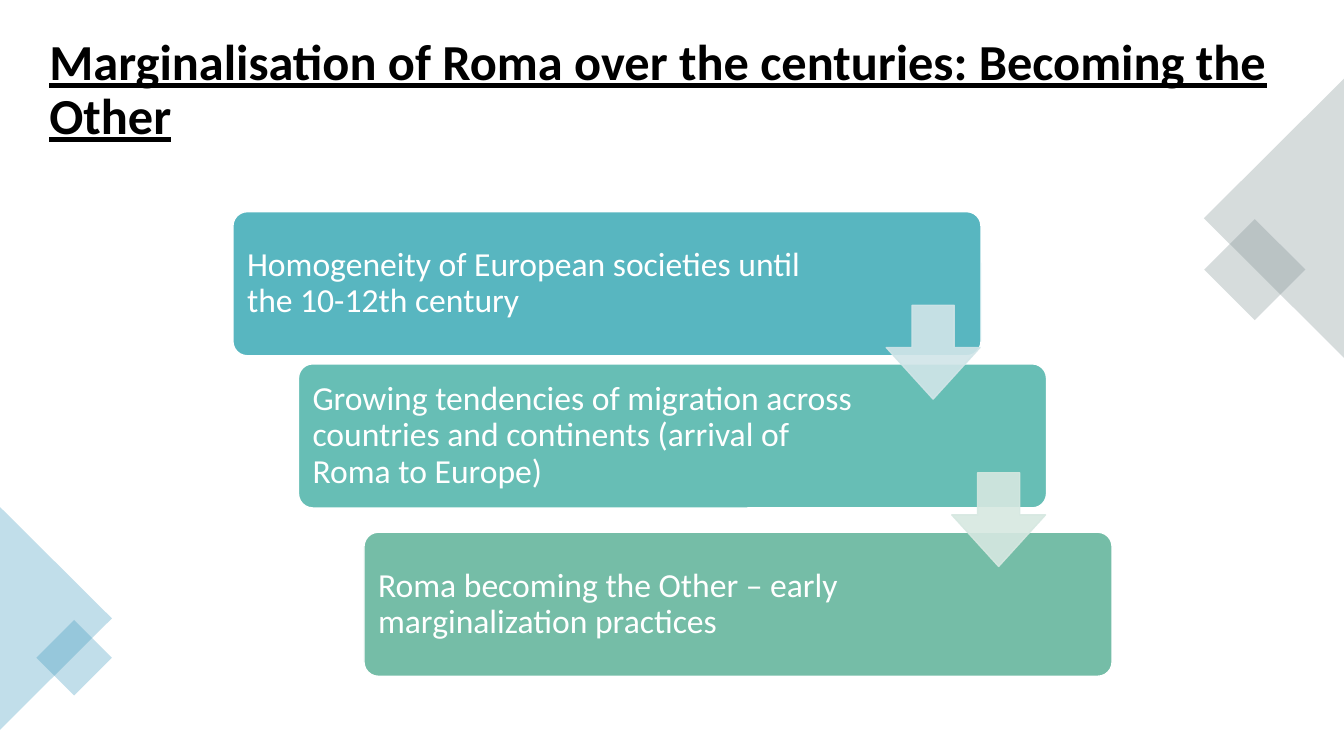
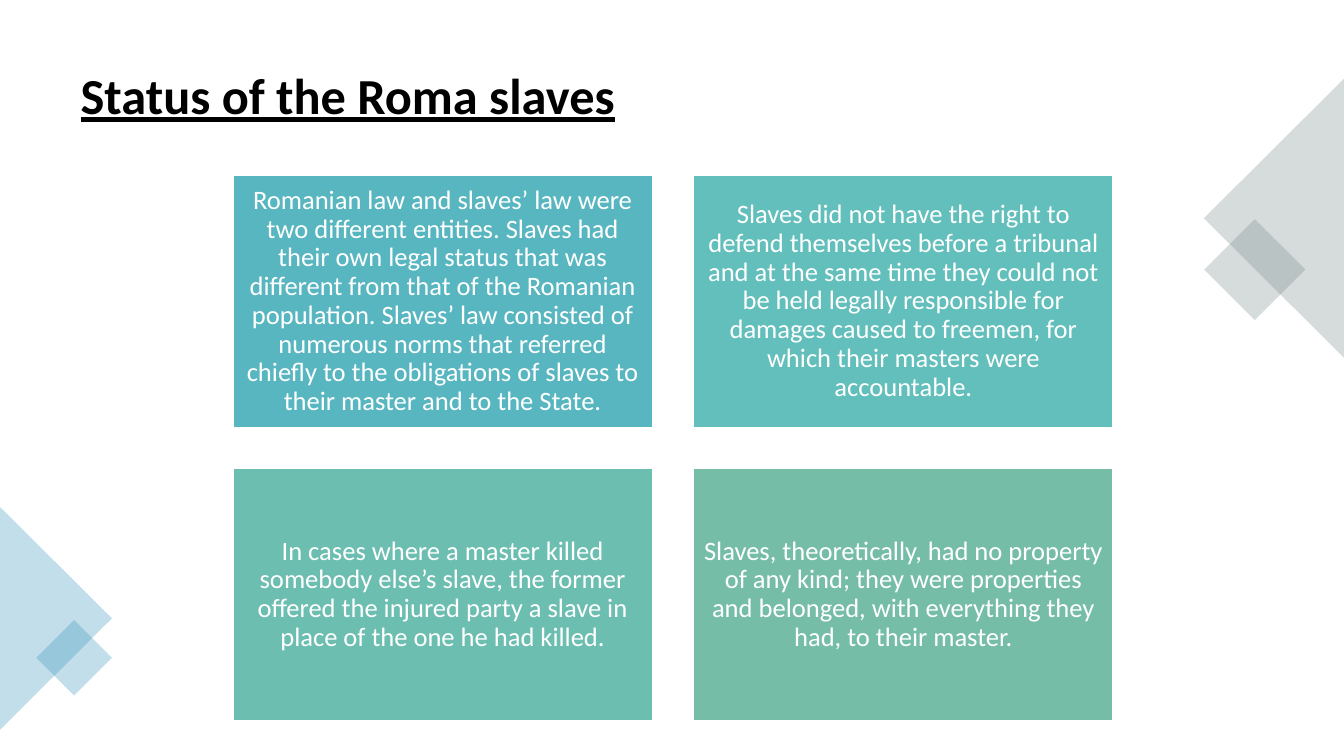
"""Build two slides on the marginalisation and the legal status of the Roma."""
from lxml import etree
from pptx import Presentation
from pptx.dml.color import RGBColor
from pptx.enum.shapes import MSO_SHAPE
from pptx.enum.text import MSO_ANCHOR, MSO_AUTO_SIZE, PP_ALIGN
from pptx.oxml.ns import qn
from pptx.util import Inches, Pt

RECT, ROUND = MSO_SHAPE.RECTANGLE, MSO_SHAPE.ROUNDED_RECTANGLE
PEAK, ARROW = MSO_SHAPE.ISOSCELES_TRIANGLE, MSO_SHAPE.DOWN_ARROW
MIDDLE, NO_FIT = MSO_ANCHOR.MIDDLE, MSO_AUTO_SIZE.NONE
LEFT, CENTER = PP_ALIGN.LEFT, PP_ALIGN.CENTER

FONT = "Calibri"
WHITE = RGBColor(0xFF, 0xFF, 0xFF)
BLACK = RGBColor(0x00, 0x00, 0x00)
GREY = RGBColor(0x7A, 0x8C, 0x8E)
BLUE = RGBColor(0x34, 0x94, 0xBA)
TEAL = RGBColor(0x58, 0xB6, 0xC0)
AQUA = RGBColor(0x62, 0xBF, 0xBB)
MINT = RGBColor(0x67, 0xBE, 0xB5)
JADE = RGBColor(0x6C, 0xBE, 0xB0)
SAGE = RGBColor(0x75, 0xBD, 0xA7)
ICE = RGBColor(0xD1, 0xE5, 0xE8)
PALE = RGBColor(0xD6, 0xE8, 0xE1)

DECOR = [
    (RECT, (12.09, 2.32, 0.71, 0.71), 45, GREY),
    (PEAK, (11.25, 1.47, 2.77, 1.39), 270, GREY),
    (PEAK, (-0.55, 5.58, 2.21, 1.11), 90, BLUE),
    (RECT, (0.47, 6.26, 0.53, 0.53), 45, BLUE),
]
STEPS = [
    (2.1, TEAL, "Homogeneity of European societies until the 10-12th century"),
    (3.61, MINT, "Growing tendencies of migration across countries and "
                 "continents (arrival of Roma to Europe)"),
    (5.28, SAGE, "Roma becoming the Other – early marginalization practices"),
]
ARROWS = [(3.03, ICE), (4.69, PALE)]
FACTS = [
    (TEAL, "Romanian law and slaves’ law were two different entities. Slaves "
           "had their own legal status that was different from that of the "
           "Romanian population. Slaves’ law consisted of numerous norms that "
           "referred chiefly to the obligations of slaves to their master and "
           "to the State."),
    (AQUA, "Slaves did not have the right to defend themselves before a "
           "tribunal and at the same time they could not be held legally "
           "responsible for damages caused to freemen, for which their masters "
           "were accountable."),
    (JADE, "In cases where a master killed somebody else’s slave, the former "
           "offered the injured party a slave in place of the one he had "
           "killed."),
    (SAGE, "Slaves, theoretically, had no property of any kind; they were "
           "properties and belonged, with everything they had, to their "
           "master."),
]
EDGE, SHIFT = 2.31, 0.65
STEP_W, STEP_H = 7.42, 1.43
ARROW_X, ARROW_W = 8.79, 0.93
CARD_W, CARD_H, TOP = 4.16, 2.5, 1.74
COL_GAP, ROW_GAP = 0.41, 0.41


def add_box(slide, kind, area, color, line=None, alpha=100, adjust=()):
    box = slide.shapes.add_shape(kind, *map(Inches, area))
    box.shadow.inherit = False
    box.fill.solid()
    box.fill.fore_color.rgb = color
    if line is None:
        box.line.fill.background()
    else:
        box.line.color.rgb = line
        box.line.width = Pt(1)
    for i, value in enumerate(adjust):
        box.adjustments[i] = value
    if alpha < 100:
        for tag in box._element.spPr.iter(qn("a:srgbClr")):
            etree.SubElement(tag, qn("a:alpha")).set("val", str(alpha * 1000))
    return box


def write(shape, text, size, color, align=LEFT, pads=None):
    frame = shape.text_frame
    frame.text = text
    frame.word_wrap = True
    frame.auto_size = NO_FIT
    frame.vertical_anchor = MIDDLE
    if pads:
        (frame.margin_left, frame.margin_top,
         frame.margin_right, frame.margin_bottom) = map(Inches, pads)
    para = frame.paragraphs[0]
    para.alignment = align
    para.line_spacing = 0.9
    para.font.name = FONT
    para.font.size = Pt(size)
    para.font.color.rgb = color
    return para


def add_slide(deck, title, area):
    slide = deck.slides.add_slide(deck.slide_layouts[5])
    for kind, place, turn, color in DECOR:
        add_box(slide, kind, place, color, alpha=30).rotation = turn
    head = slide.shapes.title
    head.left, head.top, head.width, head.height = map(Inches, area)
    font = write(head, title, 36, BLACK).font
    font.bold = font.underline = True
    return slide


def add_steps(slide):
    for i, (top, color, text) in enumerate(STEPS):
        area = (EDGE + i * SHIFT, top, STEP_W, STEP_H)
        box = add_box(slide, ROUND, area, color, WHITE, adjust=(0.1,))
        write(box, text, 24, WHITE, pads=(0.1, 0.1, 1.69, 0.1))
    for i, (top, color) in enumerate(ARROWS):
        area = (ARROW_X + i * SHIFT, top, ARROW_W, ARROW_W)
        add_box(slide, ARROW, area, color, color, 90, (0.45, 0.55))


def add_cards(slide):
    for i, (color, text) in enumerate(FACTS):
        row, col = divmod(i, 2)
        area = (EDGE + col * (CARD_W + COL_GAP),
                TOP + row * (CARD_H + ROW_GAP), CARD_W, CARD_H)
        box = add_box(slide, RECT, area, color, WHITE)
        write(box, text, 19, WHITE, CENTER, (0.08,) * 4)


def main():
    deck = Presentation()
    deck.slide_width, deck.slide_height = Inches(13.33), Inches(7.5)
    add_steps(add_slide(
        deck, "Marginalisation of Roma over the centuries: Becoming the Other",
        (0.39, 0.18, 12.55, 1.45)))
    add_cards(add_slide(
        deck, "Status of the Roma slaves", (0.7, 0.35, 11.93, 1.24)))
    deck.save("out.pptx")


if __name__ == "__main__":
    main()
